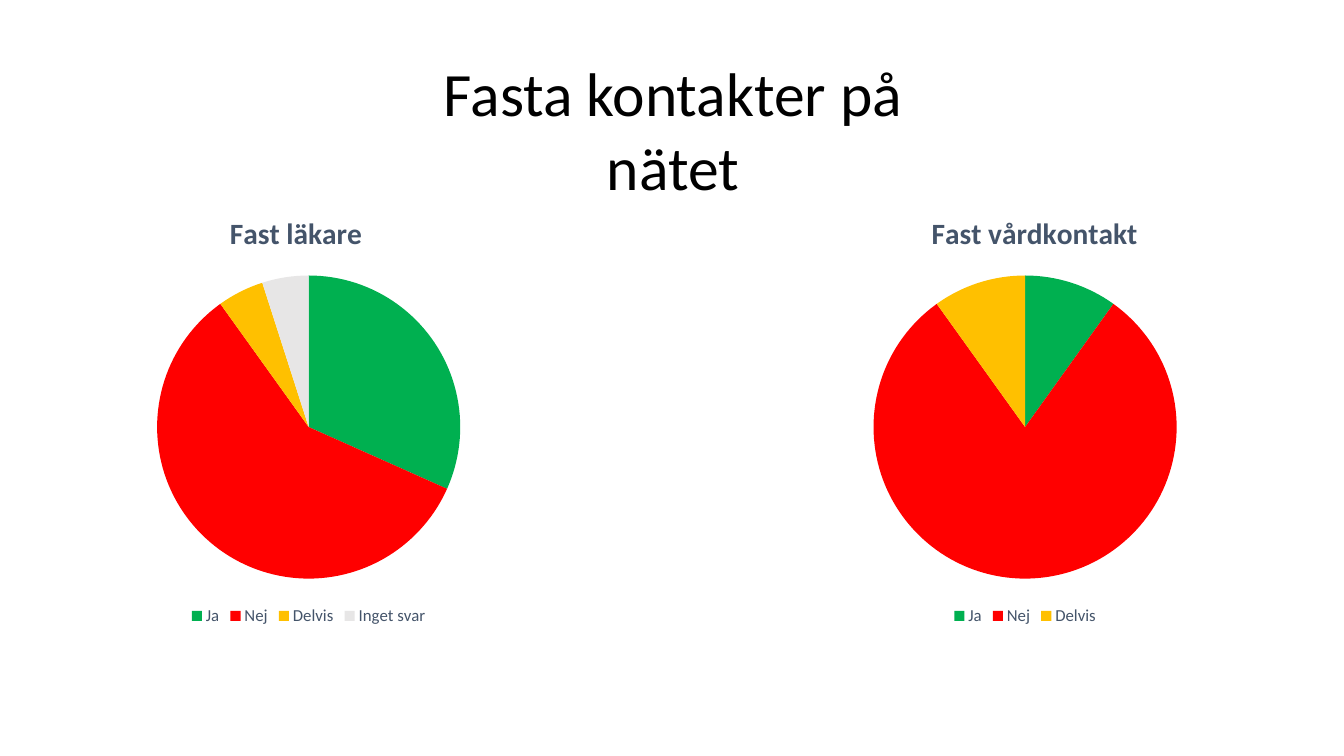
"""Build a slide with two pie charts about fixed care contacts."""
import pptx
import pptx.util
import pptx.chart.data
import pptx.dml.color
import pptx.enum.chart
import pptx.enum.text
import pptx.oxml
import pptx.oxml.ns

Pt = pptx.util.Pt
RGBColor = pptx.dml.color.RGBColor
FONT = "Calibri"
BLACK = RGBColor(0x00, 0x00, 0x00)
SLATE = RGBColor(0x44, 0x54, 0x6A)
GREEN = RGBColor(0x00, 0xB0, 0x50)
RED = RGBColor(0xFF, 0x00, 0x00)
AMBER = RGBColor(0xFF, 0xC0, 0x00)
GREY = RGBColor(0xE7, 0xE6, 0xE6)

ANSWERS = [("Ja", GREEN), ("Nej", RED), ("Delvis", AMBER), ("Inget svar", GREY)]
PIES = [
    ("Fast läkare", -80, 601, [32, 59, 5, 5]),
    ("Fast vårdkontakt", 379.5, 705.5, [10, 81, 10]),
]


def set_font(font, size, color, bold=False):
    font.name = FONT
    font.size = Pt(size)
    font.bold = bold
    font.color.rgb = color


def set_layout(parent, index, **settings):
    for old in parent.findall(pptx.oxml.ns.qn("c:layout")):
        parent.remove(old)
    values = "".join(f'<c:{name} val="{value}"/>' for name, value in settings.items())
    parent.insert(index, pptx.oxml.parse_xml(
        f'<c:layout {pptx.oxml.ns.nsdecls("c")}><c:manualLayout>'
        f"{values}</c:manualLayout></c:layout>"))


prs = pptx.Presentation()
prs.slide_width = Pt(960)
prs.slide_height = Pt(540)
s = prs.slides.add_slide(prs.slide_layouts[6])

for title, left, width, shares in PIES:
    data = pptx.chart.data.CategoryChartData()
    data.categories = [answer for answer, color in ANSWERS[:len(shares)]]
    data.add_series("Series 1", shares)
    chart = s.shapes.add_chart(
        pptx.enum.chart.XL_CHART_TYPE.PIE,
        Pt(left), Pt(145), Pt(width), Pt(305), data).chart
    set_font(chart.font, 10, BLACK)

    chart.has_title = True
    p = chart.chart_title.text_frame.paragraphs[0]
    r = p.add_run()
    r.text = title
    set_font(r.font, 21, SLATE, bold=True)
    chart.chart_title.include_in_layout = False
    set_layout(chart.chart_title._element, 1,
               xMode="edge", yMode="edge", x=0.4, y=0.01)

    chart.has_legend = True
    chart.legend.position = pptx.enum.chart.XL_LEGEND_POSITION.BOTTOM
    chart.legend.include_in_layout = False
    set_font(chart.legend.font, 12, SLATE)

    plot = chart.plots[0]
    plot.vary_by_categories = True
    set_layout(plot._element.getparent(), 0, layoutTarget="inner",
               xMode="edge", yMode="edge", x=0.1, y=0.17, w=0.8, h=0.71)
    for i in range(len(shares)):
        point = plot.series[0].points[i]
        point.format.fill.solid()
        point.format.fill.fore_color.rgb = ANSWERS[i][1]
        point.format.line.fill.background()

sp = s.shapes.add_textbox(Pt(260.5), Pt(36), Pt(451.5), Pt(60.5))
tf = sp.text_frame
tf.word_wrap = True
tf.margin_right = Pt(18)
p = tf.paragraphs[0]
p.alignment = pptx.enum.text.PP_ALIGN.CENTER
r = p.add_run()
r.text = "Fasta kontakter på nätet"
set_font(r.font, 44, BLACK)

prs.save("out.pptx")
